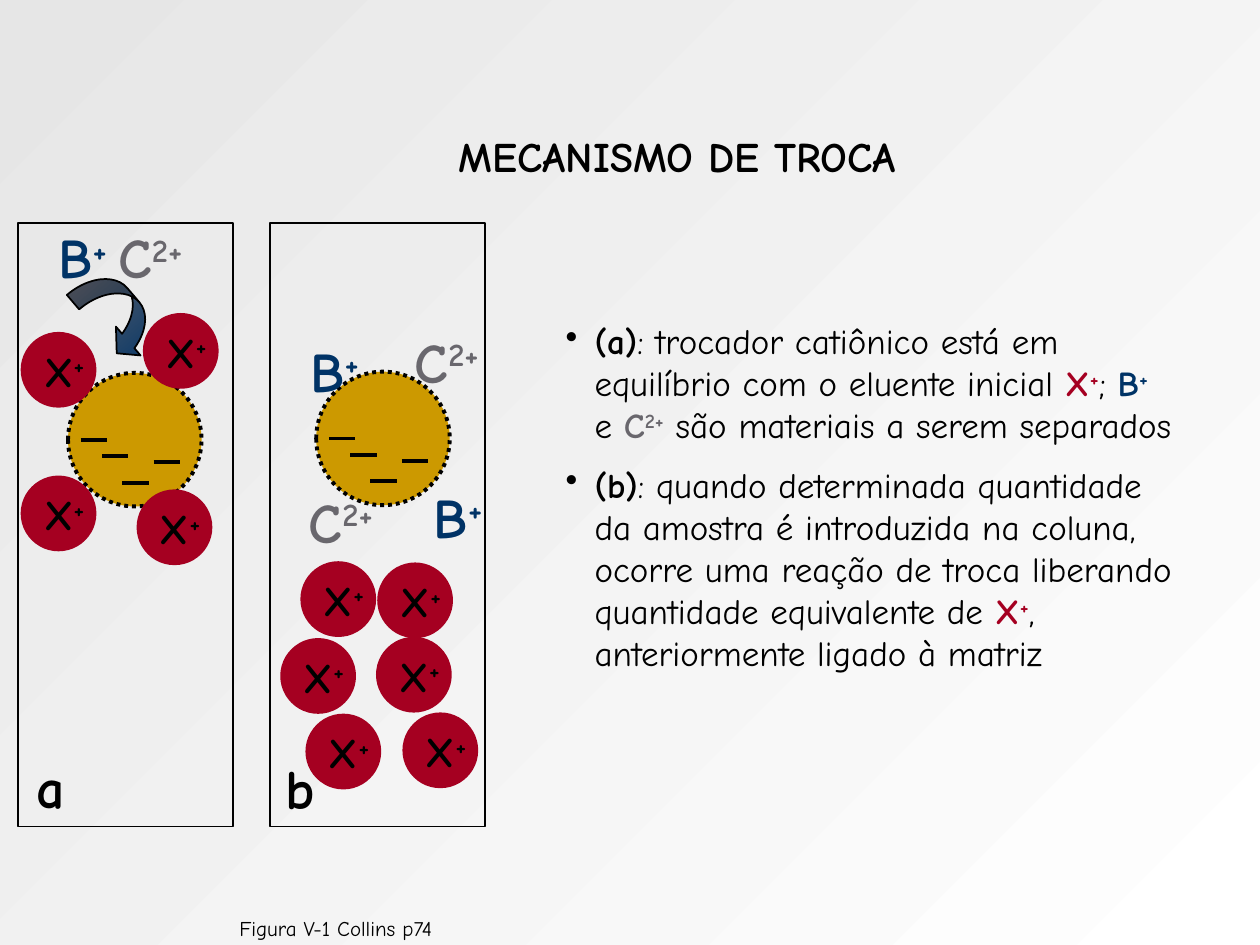
import pptx
import pptx.dml.color
import pptx.enum.dml
import pptx.enum.shapes
import pptx.enum.text
import pptx.oxml.ns
import pptx.util
from lxml import etree

Inches = pptx.util.Inches
Pt = pptx.util.Pt
RGBColor = pptx.dml.color.RGBColor
Shape = pptx.enum.shapes.MSO_SHAPE
Align = pptx.enum.text.PP_ALIGN
Anchor = pptx.enum.text.MSO_ANCHOR
qn = pptx.oxml.ns.qn

BLACK = RGBColor(0x00, 0x00, 0x00)
WHITE = RGBColor(0xFF, 0xFF, 0xFF)
PALE = RGBColor(0xE6, 0xE6, 0xE6)
GOLD = RGBColor(0xCC, 0x99, 0x00)
RED = RGBColor(0xA5, 0x00, 0x21)
BLUE = RGBColor(0x00, 0x33, 0x66)
GREY = RGBColor(0x69, 0x67, 0x6D)


def ion(name, charge, color):
    return [(name, color, True, False), (charge, color, True, True)]


def bold(words):
    return [(words, BLACK, True, False)]


def plain(words):
    return [(words, BLACK, False, False)]


class Deck:
    """Holds the style and the current slide, and draws each kind of element."""

    def __init__(self):
        self.font = "Comic Neue"
        self.file = pptx.Presentation()
        self.file.slide_width, self.file.slide_height = Inches(10), Inches(7.5)
        self.slide = self.file.slides.add_slide(self.file.slide_layouts[6])
        self.root = self.slide.shapes
        self.blend(self.slide.background.fill, (WHITE, PALE), 135)

    def blend(self, fill, colors, angle):
        fill.gradient()
        fill.gradient_angle = angle
        for stop, color in zip(fill.gradient_stops, colors):
            stop.color.rgb = color

    def shape(self, host, kind, x, y, w, h, fill=None, line=BLACK, width=2.25):
        item = host.add_shape(kind, Inches(x), Inches(y), Inches(w), Inches(h))
        item.shadow.inherit = False
        if fill is None:
            item.fill.background()
        else:
            item.fill.solid()
            item.fill.fore_color.rgb = fill
        item.line.color.rgb = line
        item.line.width = Pt(width)
        return item

    def dash(self, host, x, y, w):
        item = host.add_connector(pptx.enum.shapes.MSO_CONNECTOR.STRAIGHT,
                                  Inches(x), Inches(y), Inches(x + w), Inches(y))
        item.line.color.rgb = BLACK
        item.line.width = Pt(2.25)
        etree.SubElement(item._element.spPr, qn("a:effectLst"))

    def text(self, host, x, y, w, h, size, paras, align=Align.CENTER,
             anchor=Anchor.TOP, inset=None, bullet=False):
        box = host.add_textbox(Inches(x), Inches(y), Inches(w), Inches(h))
        frame = box.text_frame
        frame.word_wrap = True
        frame.vertical_anchor = anchor
        if inset is not None:
            frame.margin_left = frame.margin_right = Inches(inset)
            frame.margin_top = frame.margin_bottom = Inches(inset)
        for index, runs in enumerate(paras):
            para = frame.add_paragraph() if index else frame.paragraphs[0]
            para.alignment = align
            if index:
                para.space_before = Pt(size / 2)
            if bullet:
                self.bullet(para)
            for words, color, heavy, raised in runs:
                run = para.add_run()
                run.text = words
                run.font.name = self.font
                run.font.size = Pt(size)
                run.font.bold = heavy
                run.font.color.rgb = color
                if raised:
                    run._r.get_or_add_rPr().set("baseline", "30000")

    def bullet(self, para):
        props = para._p.get_or_add_pPr()
        props.set("marL", str(Inches(0.23)))
        props.set("indent", str(-Inches(0.23)))
        etree.SubElement(props, qn("a:buChar")).set("char", "•")

    def bead(self, x, y):
        host = self.root.add_group_shape().shapes
        ball = self.shape(host, Shape.OVAL, x, y, 1.06, 1.06, GOLD)
        ball.line.dash_style = pptx.enum.dml.MSO_LINE.ROUND_DOT
        for dx, dy in ((0.68, 0.71), (0.43, 0.87), (0.27, 0.66), (0.1, 0.53)):
            self.dash(host, x + dx, y + dy, 0.21)

    def ball(self, x, y):
        host = self.root.add_group_shape().shapes
        self.shape(host, Shape.OVAL, x, y, 0.57, 0.57, RED, RED)
        self.text(host, x + 0.03, y + 0.04, 0.6, 0.5, 24, [ion("X", "+", BLACK)])

    def label(self, x, y, w, runs):
        self.text(self.root, x, y, w, 0.63, 32, [runs])

    def arrow(self, x, y, w, h, turn):
        item = self.shape(self.root, Shape.CURVED_LEFT_ARROW, x, y, w, h, width=1)
        self.blend(item.fill, (GREY, BLUE), 270)
        for index, value in enumerate((0.376, 0.752, 0.333)):
            item.adjustments[index] = value
        item.rotation = turn


def main():
    deck = Deck()
    deck.text(deck.root, 0.75, 0.56, 9.25, 1.36, 24,
              [bold("MECANISMO DE TROCA")], anchor=Anchor.MIDDLE)
    deck.text(deck.root, 0.65, 7.27, 4.03, 0.2, 12,
              [plain("Figura V-1 Collins p74")], inset=0)

    for x in (0.14, 2.14):
        deck.shape(deck.root, Shape.RECTANGLE, x, 1.77, 1.71, 4.79, width=1)
    for x, y in ((0.54, 2.96), (2.51, 2.95)):
        deck.bead(x, y)
    for x, y in ((0.18, 3.79), (1.1, 3.9), (1.15, 2.5), (0.18, 2.65),
                 (2.4, 4.47), (3.01, 4.48), (2.24, 5.08), (3, 5.07),
                 (2.44, 5.68), (3.21, 5.67)):
        deck.ball(x, y)

    deck.label(0.11, 1.72, 1.69, ion("B", "+ ", BLUE) + ion("C", "2+", GREY))
    for x, y in ((2.28, 2.62), (3.26, 3.78)):
        deck.label(x, y, 0.75, ion("B", "+", BLUE))
    for x, y, w in ((3.12, 2.55, 0.85), (2.26, 3.82, 0.89)):
        deck.label(x, y, w, ion("C", "2+", GREY))
    for x, y, name in ((0.14, 5.92, "a"), (2.12, 5.93, "b")):
        deck.label(x, y, 0.53, bold(name))

    first = (bold("(a)")
             + plain(": trocador catiônico está em equilíbrio com o eluente inicial ")
             + ion("X", "+", RED) + plain("; ") + ion("B", "+", BLUE)
             + plain(" e ") + ion("C", "2+", GREY)
             + plain(" são materiais a serem separados"))
    second = (bold("(b)")
              + plain(": quando determinada quantidade da amostra é introduzida na coluna, "
                      "ocorre uma reação de troca liberando quantidade equivalente de ")
              + ion("X", "+", RED) + plain(", anteriormente ligado à matriz"))
    deck.text(deck.root, 4.39, 2.49, 5.02, 3.27, 20, [first, second],
              align=Align.LEFT, bullet=True)
    deck.arrow(0.73, 2.12, 0.4, 0.76, 319.5)
    deck.file.save("out.pptx")


if __name__ == "__main__":
    main()
